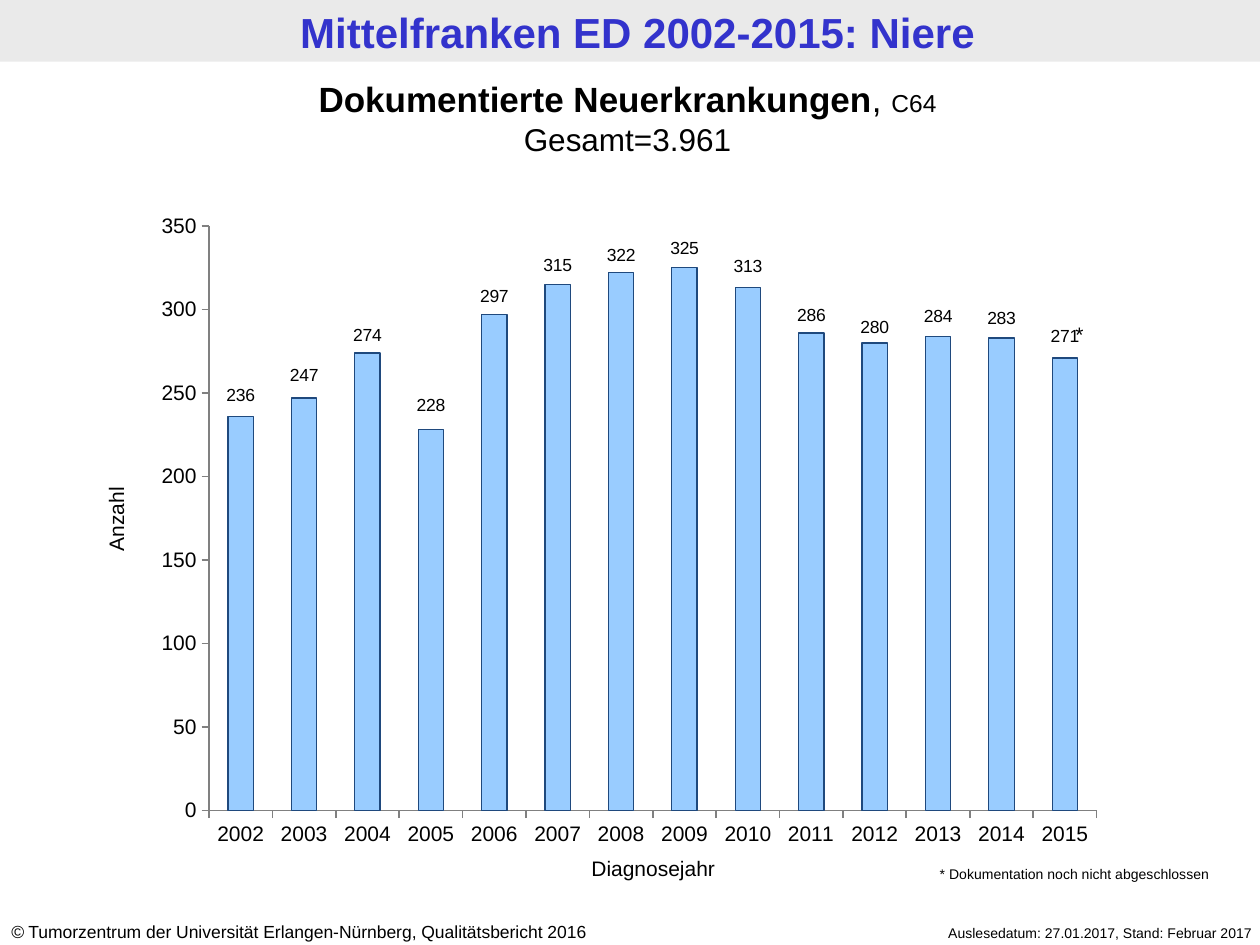
from lxml.etree import SubElement
from pptx import Presentation
from pptx.chart.data import CategoryChartData
from pptx.dml.color import RGBColor
from pptx.enum.chart import XL_CHART_TYPE as ChartType, XL_LABEL_POSITION as LabelPos
from pptx.enum.chart import XL_TICK_MARK as Tick
from pptx.enum.shapes import MSO_SHAPE as Preset
from pptx.enum.text import MSO_ANCHOR as Anchor, MSO_AUTO_SIZE as AutoSize, PP_ALIGN as Align
from pptx.oxml.ns import qn
from pptx.util import Pt

COLORS = {"band": "EAEAEA", "title": "3333CC", "text": "000000",
          "bar": "99CCFF", "bar_line": "1F497D", "axis": "808080"}
FONT = "Arial"
CASES = {2002: 236, 2003: 247, 2004: 274, 2005: 228, 2006: 297, 2007: 315, 2008: 322,
         2009: 325, 2010: 313, 2011: 286, 2012: 280, 2013: 284, 2014: 283, 2015: 271}
LABEL_GAPS = [12, 13, 10, 14, 10, 11, 10, 11, 12, 10, 9, 11, 11, 12]
AXIS_MAX = 350
PLOT = {"x": 0.066, "y": 0.029, "w": 0.914, "h": 0.903}
C15 = "http://schemas.microsoft.com/office/drawing/2012/chart"
LABEL_EXT = "{CE6537A1-D6FC-4f65-9D91-7224C49458BB}"


def rgb(name):
    return RGBColor.from_string(COLORS[name])


def style_font(font, size, color="text", bold=False, italic=False):
    font.name, font.size, font.bold, font.italic = FONT, Pt(size), bold, italic
    font.color.rgb = rgb(color)


def add_text(paragraph, text, **style):
    run = paragraph.add_run()
    run.text = text
    style_font(run.font, **style)


def add_layout(parent, index, **values):
    layout = parent.find(qn("c:layout"))
    if layout is None:
        layout = SubElement(parent, qn("c:layout"))
        parent.insert(index, layout)
    for child in list(layout):
        layout.remove(child)
    manual = SubElement(layout, qn("c:manualLayout"))
    for tag, value in values.items():
        SubElement(manual, qn(f"c:{tag}")).set("val", str(value))


def hide_leader_lines(labels):
    for leader in labels.findall(qn("c:showLeaderLines")):
        leader.set("val", "0")
    extensions = SubElement(labels, qn("c:extLst"))
    extension = SubElement(extensions, qn("c:ext"), nsmap={"c15": C15})
    extension.set("uri", LABEL_EXT)
    SubElement(extension, f"{{{C15}}}showLeaderLines").set("val", "0")


class CancerSlide:
    def __init__(self, deck):
        self.slide = deck.slides.add_slide(deck.slide_layouts[5])
        self.shapes = self.slide.shapes

    def fill_frame(self, frame, lines, align, anchor=Anchor.TOP):
        frame.word_wrap = True
        frame.auto_size = AutoSize.NONE
        frame.vertical_anchor = anchor
        for index, runs in enumerate(lines):
            paragraph = frame.paragraphs[0] if index == 0 else frame.add_paragraph()
            paragraph.alignment = align
            for text, style in runs:
                add_text(paragraph, text, **style)

    def band(self, left, top, width, height):
        band = self.shapes.add_shape(Preset.RECTANGLE, Pt(left), Pt(top), Pt(width), Pt(height))
        band.shadow.inherit = False
        band.fill.solid()
        band.fill.fore_color.rgb = rgb("band")
        band.line.fill.background()
        self.shapes.title._element.addprevious(band._element)

    def title(self, text, left, top, width, height):
        title = self.shapes.title
        title.left, title.top, title.width, title.height = map(Pt, (left, top, width, height))
        frame = title.text_frame
        frame.margin_left = frame.margin_right = Pt(6.5)
        frame.margin_top = frame.margin_bottom = Pt(3)
        self.fill_frame(frame, [[(text, {"size": 24, "color": "title", "bold": True})]], Align.CENTER)

    def text(self, lines, left, top, width, height, align=Align.LEFT, rotation=0):
        box = self.shapes.add_textbox(Pt(left), Pt(top), Pt(width), Pt(height))
        box.rotation = rotation
        self.fill_frame(box.text_frame, lines, align)

    def chart(self, cases, left, top, width, height):
        data = CategoryChartData()
        data.categories = [str(year) for year in cases]
        data.add_series("Neuerkrankungen", list(cases.values()))
        chart = self.shapes.add_chart(ChartType.COLUMN_STACKED, Pt(left), Pt(top),
                                      Pt(width), Pt(height), data).chart
        chart.has_legend = chart.has_title = False
        style_font(chart.font, 12)
        for axis in (chart.category_axis, chart.value_axis):
            axis.has_major_gridlines = False
            axis.major_tick_mark, axis.minor_tick_mark = Tick.OUTSIDE, Tick.NONE
            axis.format.line.color.rgb = rgb("axis")
            axis.format.line.width = Pt(1)
            style_font(axis.tick_labels.font, 12)
        chart.value_axis.minimum_scale, chart.value_axis.maximum_scale = 0, AXIS_MAX
        chart.value_axis.major_unit = 50

        plot = chart.plots[0]
        plot.gap_width, plot.overlap, plot.vary_by_categories = 150, 100, False
        bars = plot.series[0]
        bars.format.fill.solid()
        bars.format.fill.fore_color.rgb = rgb("bar")
        bars.format.line.color.rgb = rgb("bar_line")
        bars.format.line.width = Pt(0.75)
        bars.data_labels.show_value = True
        style_font(bars.data_labels.font, 10)
        for index in range(len(cases)):
            label = bars.points[index].data_label
            style_font(label.font, 10)
            label.position = LabelPos.CENTER

        chart_xml = chart._chartSpace
        for label, count, gap in zip(chart_xml.iter(qn("c:dLbl")), cases.values(), LABEL_GAPS):
            rise = count / AXIS_MAX * PLOT["h"] / 2 + gap / height
            add_layout(label, 1, x=0, y=round(-rise, 4))
        hide_leader_lines(next(chart_xml.iter(qn("c:dLbls"))))
        add_layout(next(chart_xml.iter(qn("c:plotArea"))), 0, layoutTarget="inner",
                   xMode="edge", yMode="edge", **PLOT)


def main():
    deck = Presentation()
    deck.slide_width, deck.slide_height = Pt(720), Pt(540)
    page = CancerSlide(deck)
    small, note, axis = {"size": 10}, {"size": 8}, {"size": 12}

    page.band(0, 0, 720, 35.3)
    page.title("Mittelfranken ED 2002-2015: Niere", 4.3, 0.7, 720, 35.3)
    page.text([[("©", {"size": 10, "italic": True}),
                (" Tumorzentrum der Universität Erlangen-Nürnberg, Qualitätsbericht 2016", small)]],
              -0.7, 522.7, 377.3, 19.4)
    page.text([[("Auslesedatum: 27.01.2017, Stand: Februar 2017", note)]],
              478.8, 524.9, 244, 17.3, Align.RIGHT)
    page.chart(CASES, 82.8, 118.4, 555, 370)
    page.text([[("Dokumentierte Neuerkrankungen", {"size": 20, "bold": True}),
                (", ", {"size": 20}), ("C64", {"size": 14})],
               [("Gesamt=3.961", {"size": 18})]], -2.9, 41, 723, 53.3, Align.CENTER)
    page.text([[("Diagnosejahr", axis)]], 292.3, 485.3, 162, 21.6, Align.CENTER)
    page.text([[("Anzahl", axis)]], 22.3, 285.8, 87.8, 21.6, Align.CENTER, rotation=270)
    page.text([[("*", axis)]], 598.3, 180, 28, 21.6, Align.RIGHT)
    page.text([[("* Dokumentation noch nicht abgeschlossen", note)]], 529.9, 491, 178.6, 17.3)
    deck.save("out.pptx")


if __name__ == "__main__":
    main()
